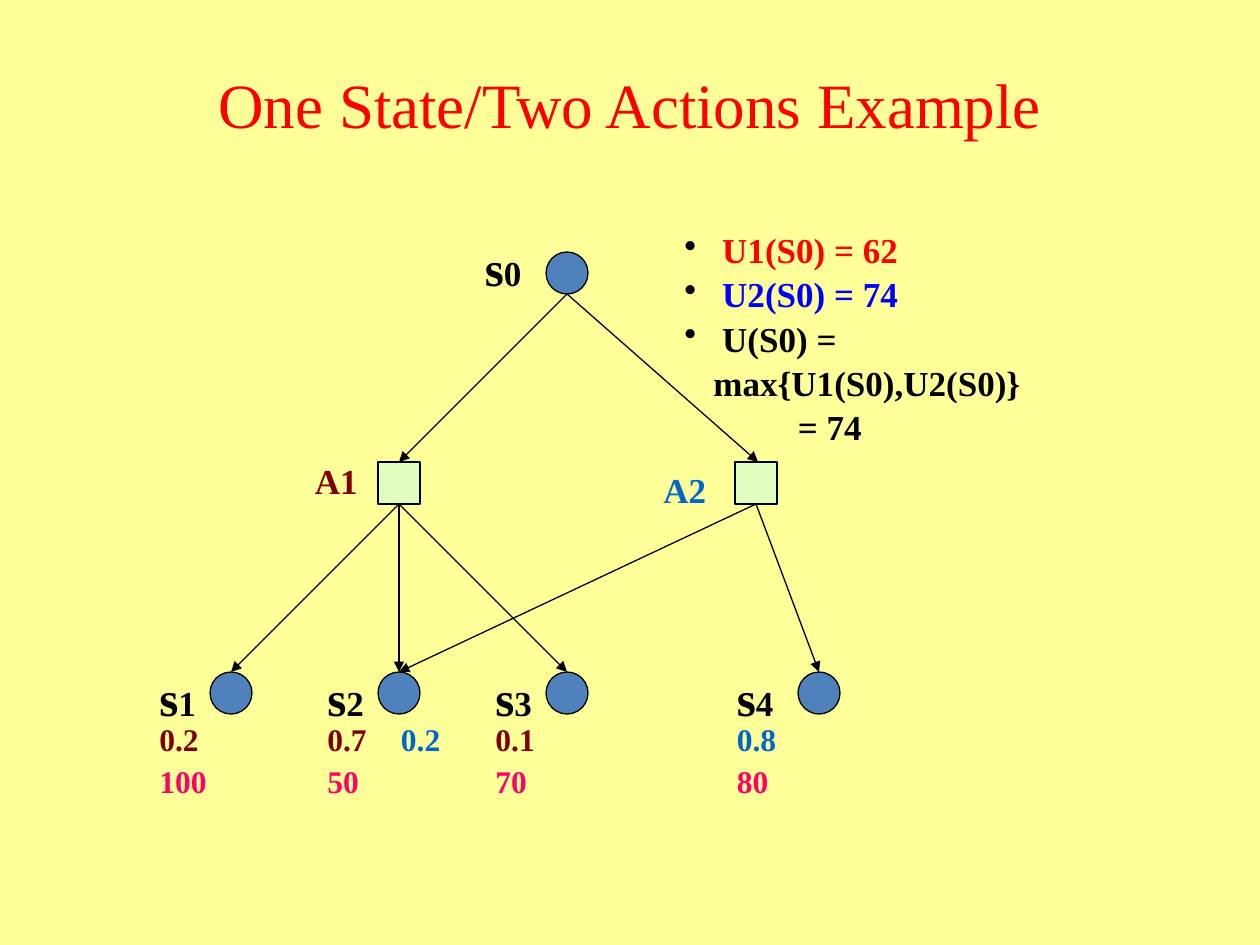
"""Build the decision tree slide "One State/Two Actions Example"."""
from lxml.etree import SubElement
from pptx import Presentation
from pptx.dml.color import RGBColor
from pptx.enum.shapes import MSO_CONNECTOR, MSO_SHAPE
from pptx.enum.text import MSO_ANCHOR, PP_ALIGN
from pptx.oxml.ns import qn
from pptx.util import Inches, Pt

COLORS = {
    "background": "FFFF99", "title": "FF0000", "text": "000000",
    "state": "4F81BD", "action": "E0FFC1", "a1": "800000", "a2": "0066CC",
    "utility": "FF0066", "u1": "FF0000", "u2": "0000FF",
}
RGB = {name: RGBColor.from_string(value) for name, value in COLORS.items()}
FONT = "Times New Roman"

prs = Presentation()
prs.slide_width, prs.slide_height = Inches(10), Inches(7.5)
UNIT = prs.slide_width / 30
s = prs.slides.add_slide(prs.slide_layouts[6])
s.background.fill.solid()
s.background.fill.fore_color.rgb = RGB["background"]


def grid(*cells):
    return [round(cell * UNIT) for cell in cells]


def add_text(box, paragraphs, bold=True, wrap=False):
    tf = s.shapes.add_textbox(*grid(*box)).text_frame
    tf.word_wrap = wrap
    for i, runs in enumerate(paragraphs):
        p = tf.add_paragraph() if i else tf.paragraphs[0]
        p.font.name, p.font.bold = FONT, bold
        for text, size, color in runs:
            r = p.add_run()
            r.text = text
            r.font.size, r.font.color.rgb = Pt(size), RGB[color]
    return tf


nodes = [(MSO_SHAPE.OVAL, "state", col, row)
         for col, row in [(13, 6), (5, 16), (9, 16), (13, 16), (19, 16)]]
nodes += [(MSO_SHAPE.RECTANGLE, "action", col, 11) for col in (9, 17.5)]
for kind, color, col, row in nodes:
    sp = s.shapes.add_shape(kind, *grid(col, row, 1, 1))
    sp.shadow.inherit = False
    sp.fill.solid()
    sp.fill.fore_color.rgb = RGB[color]
    sp.line.color.rgb = RGB["text"]
    sp.line.width = Pt(0.75)

arrows = [(13.5, 7, 9.5, 11), (13.5, 7, 18.05, 11)]
arrows += [(9.5, 12, col, 16) for col in (5.5, 9.5, 13.5)]
arrows += [(18, 12, col, 16) for col in (9.5, 19.5)]
for ends in arrows:
    line = s.shapes.add_connector(MSO_CONNECTOR.STRAIGHT, *grid(*ends))
    line.line.color.rgb = RGB["text"]
    line.line.width = Pt(0.75)
    SubElement(line.line._get_or_add_ln(), qn("a:tailEnd"), type="triangle")
    SubElement(line._element.spPr, qn("a:effectLst"))

states = [("0", 11.25, 5.5), ("1", 3.5, 15.75), ("2", 7.5, 15.75),
          ("3", 11.5, 15.75), ("4", 17.25, 15.75)]
for number, col, row in states:
    add_text((col, row, 1.47, 1.71), [[("s", 28, "text"), (number, 20, "text")]])

for name, color, col, row in [("A1", "a1", 7.2, 10.8), ("A2", "a2", 15.5, 11)]:
    add_text((col, row, 1.68, 1.29), [[(name, 20, color)]])

chances = [("0.2", "a1", 3.5), ("0.7", "a1", 7.5), ("0.1", "a1", 11.5),
           ("0.2", "a2", 9.25), ("0.8", "a2", 17.25)]
for chance, color, col in chances:
    add_text((col, 17, 1.56, 1.2), [[(chance, 18, color)]])

for utility, col, width in [("100", 3.5, 1.74), ("50", 7.5, 1.35),
                            ("70", 11.5, 1.35), ("80", 17.25, 1.35)]:
    add_text((col, 18, width, 1.2), [[(utility, 18, "utility")]])

tf = add_text((16, 5.25, 11.64, 4.35), [
    [(" ", 20, "text"), ("U1(S0) = 62", 20, "u1")],
    [(" ", 20, "text"), ("U2(S0) = 74", 20, "u2")],
    [(" U(S0) = max{U1(S0),U2(S0)}", 20, "text")],
    [("= 74", 20, "text")],
], wrap=True)
for p in tf.paragraphs:
    p.line_spacing = 1.05
    pPr = p._p.get_or_add_pPr()
    if p.text == "= 74":
        pPr.set("marL", str(Inches(0.9)))
        continue
    pPr.set("marL", str(Inches(0.23)))
    pPr.set("indent", str(-Inches(0.23)))
    bullet = pPr.makeelement(qn("a:buChar"), {"char": "•"})
    pPr.insert_element_before(bullet, "a:tabLst", "a:defRPr", "a:extLst")

tf = add_text((0.5, 1, 29, 2.5), [[("One State/Two Actions Example", 36, "title")]],
              bold=False, wrap=True)
tf.vertical_anchor = MSO_ANCHOR.BOTTOM
tf.paragraphs[0].alignment = PP_ALIGN.CENTER

prs.save("out.pptx")
